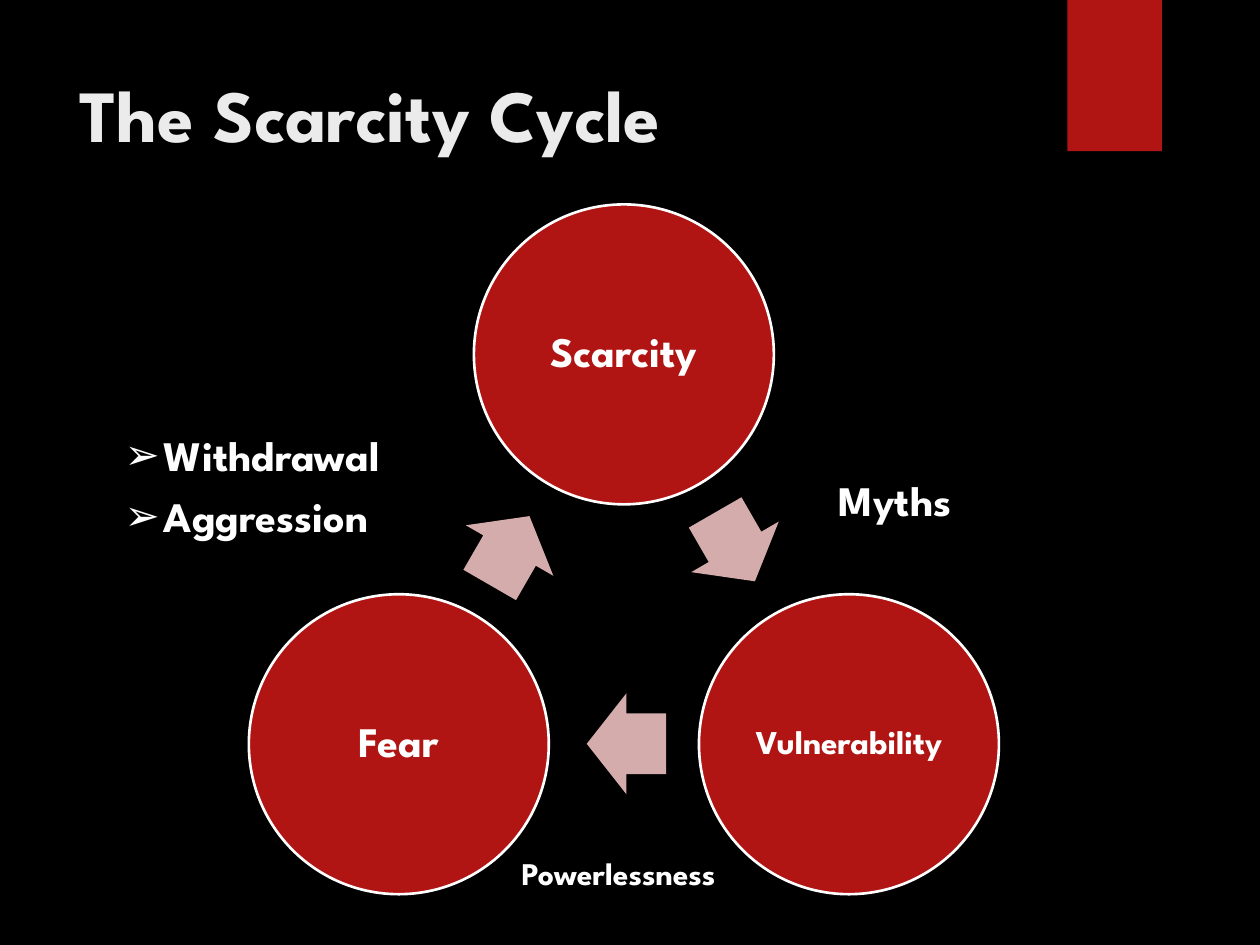
"""Build the Scarcity Cycle slide: three linked circles with labels and a short list."""
from collections import namedtuple
from math import cos, radians, sin

from lxml import etree
from pptx import Presentation
from pptx.dml.color import RGBColor
from pptx.enum.shapes import MSO_SHAPE
from pptx.enum.text import MSO_ANCHOR, MSO_AUTO_SIZE, PP_ALIGN
from pptx.oxml.ns import qn
from pptx.util import Pt

RECTANGLE, OVAL, ARROW = MSO_SHAPE.RECTANGLE, MSO_SHAPE.OVAL, MSO_SHAPE.RIGHT_ARROW
TOP, MIDDLE = MSO_ANCHOR.TOP, MSO_ANCHOR.MIDDLE
LEFT, CENTER = PP_ALIGN.LEFT, PP_ALIGN.CENTER
NO_FIT = MSO_AUTO_SIZE.NONE

Theme = namedtuple("Theme", "font black red pink white title title_size label small caption")
theme = Theme("League Spartan", RGBColor(0, 0, 0), RGBColor(0xB0, 0x15, 0x13),
              RGBColor(0xD4, 0xAC, 0xAB), RGBColor(0xFF, 0xFF, 0xFF),
              RGBColor(0xEB, 0xEB, 0xEB), Pt(42), Pt(24), Pt(19), Pt(18))


def write(holder, lines, size, color=theme.white, align=LEFT, anchor=TOP):
    frame = holder.text_frame
    frame.text = "\n".join(lines)
    frame.word_wrap = True
    frame.auto_size = NO_FIT
    frame.vertical_anchor = anchor
    for paragraph in frame.paragraphs:
        paragraph.alignment = align
        paragraph.space_before = Pt(0)
        font = paragraph.font
        font.name, font.size, font.bold = theme.font, size, True
        font.color.rgb = color
    return frame


def draw(kind, left, top, width, height, fill):
    shape = slide.shapes.add_shape(kind, Pt(left), Pt(top), Pt(width), Pt(height))
    shape.shadow.inherit = False
    shape.fill.solid()
    shape.fill.fore_color.rgb = fill
    shape.line.fill.background()
    return shape


deck = Presentation()
deck.slide_width, deck.slide_height = Pt(720), Pt(540)
slide = deck.slides.add_slide(deck.slide_layouts[1])
slide.background.fill.solid()
slide.background.fill.fore_color.rgb = theme.black

draw(RECTANGLE, 610, 0, 54, 86.4, theme.red)

heading = slide.shapes.title
heading.left, heading.top, heading.width, heading.height = Pt(38), Pt(36), Pt(556), Pt(110)
write(heading, ["The Scarcity Cycle"], theme.title_size, theme.title)

hub_x, hub_y, orbit, diameter = 356.5, 351, 148.5, 171.4
stages = [("Scarcity", theme.label, -90), ("Vulnerability", theme.small, 30),
          ("Fear", theme.label, 150)]
for stage, size, angle in stages:
    x = hub_x + orbit * cos(radians(angle))
    y = hub_y + orbit * sin(radians(angle))
    circle = draw(OVAL, x - diameter / 2, y - diameter / 2, diameter, diameter, theme.red)
    circle.line.color.rgb = theme.white
    circle.line.width = Pt(1.5)
    frame = write(circle, [stage], size, align=CENTER, anchor=MIDDLE)
    frame.margin_left = frame.margin_right = frame.margin_top = frame.margin_bottom = Pt(2)
    frame.paragraphs[0].line_spacing = 0.9

arrow_width, arrow_height = 45.4, 57.8
for x, y, turn in [(420, 312.5, 60), (358, 425, 180), (291.2, 314.6, 300)]:
    step = draw(ARROW, x - arrow_width / 2, y - arrow_height / 2,
                arrow_width, arrow_height, theme.pink)
    step.adjustments[0], step.adjustments[1] = 0.6, 0.5
    step.rotation = turn

reactions = slide.placeholders[1]
reactions.left, reactions.top, reactions.width, reactions.height = Pt(64), Pt(242), Pt(178), Pt(71)
frame = write(reactions, ["Withdrawal", "Aggression"], theme.label)
for paragraph in frame.paragraphs:
    paragraph.space_after = Pt(6)
    properties = paragraph.runs[0].font and paragraph._p.get_or_add_pPr()
    properties.set("marL", str(Pt(22.5)))
    properties.set("indent", str(Pt(-22.5)))
    bullet = etree.Element(qn("a:buChar"), char="➢")
    properties.find(qn("a:defRPr")).addprevious(bullet)

for label, size, left, top, width, height in [
        ("Myths", theme.label, 472.3, 267.8, 162, 36),
        ("Powerlessness", theme.caption, 291, 484.6, 140, 29)]:
    caption = slide.shapes.add_textbox(Pt(left), Pt(top), Pt(width), Pt(height))
    write(caption, [label], size)

deck.save("out.pptx")
